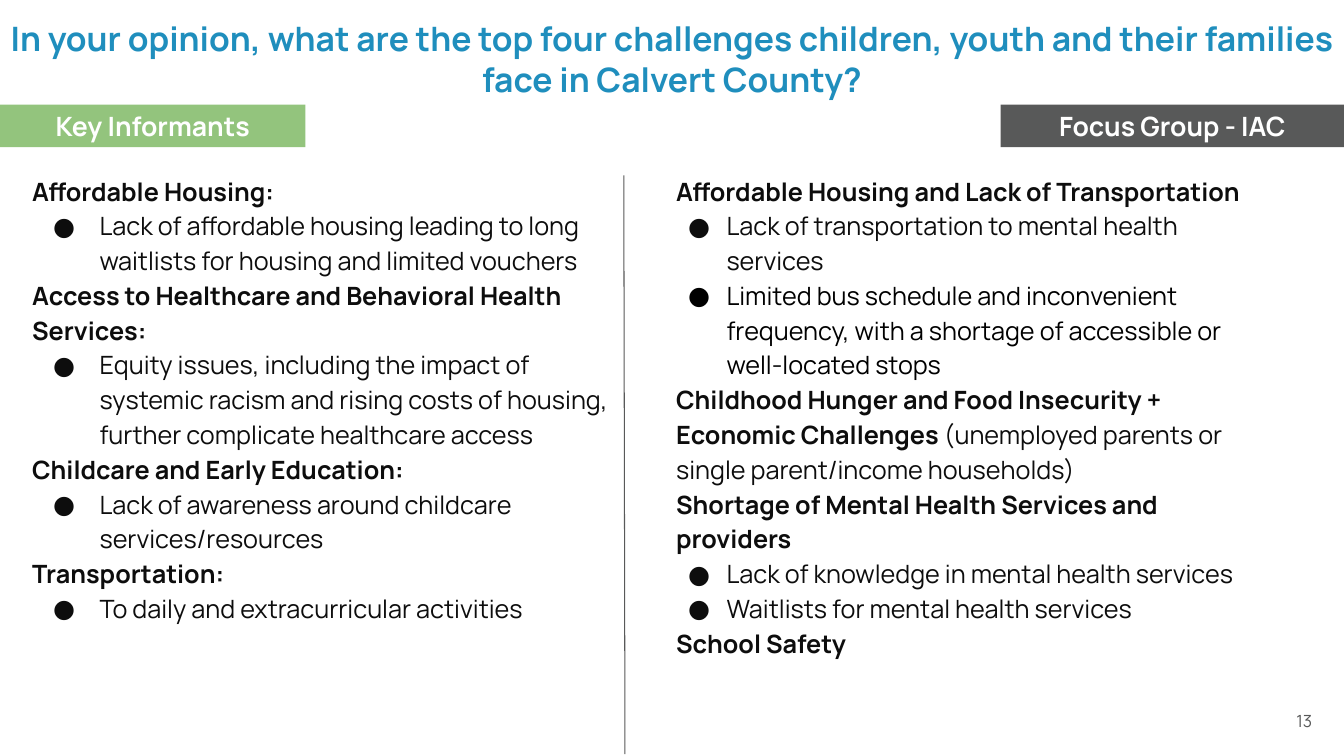
from dataclasses import dataclass

from lxml.etree import SubElement
from pptx import Presentation
from pptx.dml.color import RGBColor
from pptx.enum.shapes import MSO_CONNECTOR, MSO_SHAPE
from pptx.enum.text import MSO_ANCHOR, PP_ALIGN
from pptx.oxml.ns import qn
from pptx.util import Cm, Pt

FONT = "Manrope"
BLUE, GREEN, GREY = "1F8EBD", "93C47D", "585959"
INK, BLACK, WHITE = "0D0D0D", "000000", "FFFFFF"
BANNER_TOP, BANNER_HEIGHT = 2.64, 1.07
COLUMN_TOP = 3.99


@dataclass
class Heading:
    text: str
    detail: str = ""


@dataclass
class Bullet:
    text: str
    color: str = INK


@dataclass
class Column:
    left: float
    width: float
    height: float
    indent: float
    hanging: float
    items: list[Heading | Bullet]


@dataclass
class Banner:
    text: str
    left: float
    width: float
    fill: str


BANNERS = [
    Banner("Key Informants", 0, 7.7, GREEN),
    Banner("Focus Group - IAC", 25.22, 8.65, GREY),
]

COLUMNS = [
    Column(0.48, 15.27, 14.66, 1.7, 1.17, [
        Heading("Affordable Housing:"),
        Bullet("Lack of affordable housing leading to long waitlists for housing "
               "and limited vouchers"),
        Heading("Access to Healthcare and Behavioral Health Services:"),
        Bullet("Equity issues, including the impact of systemic racism and rising "
               "costs of housing, further complicate healthcare access"),
        Heading("Childcare and Early Education:"),
        Bullet("Lack of awareness around childcare services/resources"),
        Heading("Transportation:"),
        Bullet("To daily and extracurricular activities"),
    ]),
    Column(16.71, 15.82, 14.73, 1.27, 0.97, [
        Heading("Affordable Housing and Lack of Transportation"),
        Bullet("Lack of transportation to mental health services"),
        Bullet("Limited bus schedule and inconvenient frequency, with a shortage "
               "of accessible or well-located stops", BLACK),
        Heading("Childhood Hunger and Food Insecurity + Economic Challenges ",
                "(unemployed parents or single parent/income households)"),
        Heading("Shortage of Mental Health Services and providers"),
        Bullet("Lack of knowledge in mental health services"),
        Bullet("Waitlists for mental health services"),
        Heading("School Safety"),
    ]),
]


def rgb(color: str) -> RGBColor:
    return RGBColor.from_string(color)


def style_span(span, size: float, color: str, bold: bool = False) -> None:
    span.font.name = FONT
    span.font.size = Pt(size)
    span.font.bold = bold
    span.font.color.rgb = rgb(color)


def set_margins(frame, across: float, top: float, bottom: float) -> None:
    frame.word_wrap = True
    frame.margin_left = frame.margin_right = Cm(across)
    frame.margin_top, frame.margin_bottom = Cm(top), Cm(bottom)


def set_line(frame, text: str, align, size: float, color: str, bold: bool) -> None:
    """Fill a frame with one paragraph in a single style."""
    frame.text = text
    para = frame.paragraphs[0]
    para.alignment = align
    style_span(para.runs[0], size, color, bold)


def add_box(page, left: float, top: float, width: float, height: float):
    return page.shapes.add_textbox(Cm(left), Cm(top), Cm(width), Cm(height)).text_frame


def add_bullet_mark(para, indent: float, hanging: float, color: str) -> None:
    properties = para._p.get_or_add_pPr()
    properties.set("marL", str(Cm(indent)))
    properties.set("indent", str(-Cm(hanging)))
    mark_color = SubElement(properties, qn("a:buClr"))
    SubElement(mark_color, qn("a:srgbClr")).set("val", color)
    SubElement(properties, qn("a:buFont")).set("typeface", FONT)
    SubElement(properties, qn("a:buChar")).set("char", "●")


def add_column(page, column: Column) -> None:
    frame = add_box(page, column.left, COLUMN_TOP, column.width, column.height)
    set_margins(frame, 0.33, 0.33, 0.33)
    frame.text = "\n".join(item.text for item in column.items)
    for para, item in zip(frame.paragraphs, column.items):
        para.line_spacing = 1.15
        if isinstance(item, Bullet):
            add_bullet_mark(para, column.indent, column.hanging, item.color)
            style_span(para.runs[0], 18, item.color)
            continue
        style_span(para.runs[0], 18, INK, bold=True)
        if item.detail:
            span = para.add_run()
            span.text = item.detail
            style_span(span, 18, INK)


def add_banner(page, banner: Banner) -> None:
    shape = page.shapes.add_shape(
        MSO_SHAPE.RECTANGLE, Cm(banner.left), Cm(BANNER_TOP),
        Cm(banner.width), Cm(BANNER_HEIGHT))
    shape.shadow.inherit = False
    shape.fill.solid()
    shape.fill.fore_color.rgb = rgb(banner.fill)
    shape.line.fill.background()
    frame = shape.text_frame
    set_margins(frame, 0.25, 0.13, 0.13)
    frame.vertical_anchor = MSO_ANCHOR.TOP
    set_line(frame, banner.text, PP_ALIGN.CENTER, 19, WHITE, True)


def add_divider(page) -> None:
    divider = page.shapes.add_connector(
        MSO_CONNECTOR.STRAIGHT, Cm(15.72), Cm(4.42), Cm(15.75), Cm(19))
    divider.line.color.rgb = rgb(GREY)
    divider.line.width = Pt(0.75)
    SubElement(divider._element.spPr, qn("a:effectLst"))


def main() -> None:
    deck = Presentation()
    deck.slide_width, deck.slide_height = Cm(33.87), Cm(19.05)
    page = deck.slides.add_slide(deck.slide_layouts[6])

    number = add_box(page, 25.7, 17.65, 7.62, 1.02)
    set_margins(number, 0.25, 0.13, 0.13)
    number.vertical_anchor = MSO_ANCHOR.MIDDLE
    set_line(number, "13", PP_ALIGN.RIGHT, 12, GREY, False)

    title = add_box(page, 0, 0.43, 33.87, 2.21)
    set_margins(title, 0, 0.03, 0)
    set_line(title, "In your opinion, what are the top four challenges children, youth "
             "and their families face in Calvert County?", PP_ALIGN.CENTER, 24, BLUE, True)

    for banner in BANNERS:
        add_banner(page, banner)
    for column in COLUMNS:
        add_column(page, column)
    add_divider(page)
    deck.save("out.pptx")


if __name__ == "__main__":
    main()
